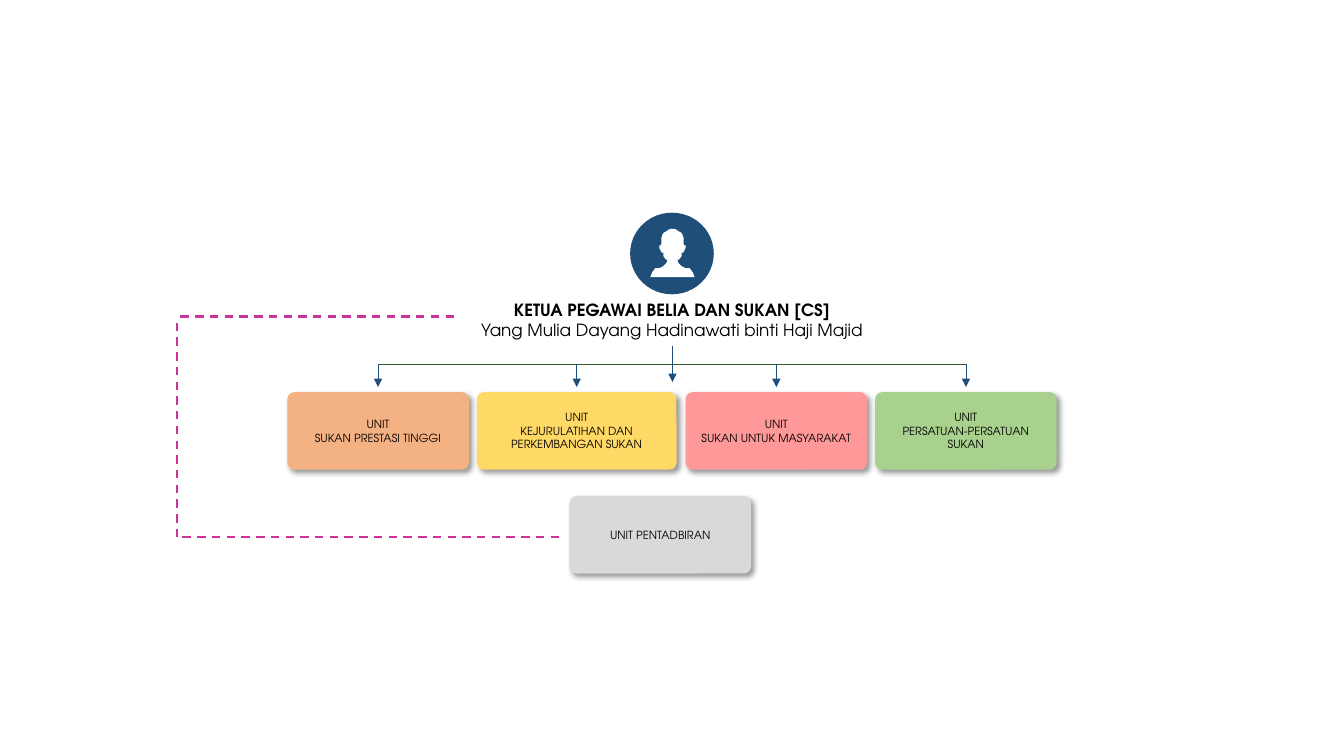
from lxml.etree import SubElement
from pptx import Presentation
from pptx.dml.color import RGBColor
from pptx.enum.dml import MSO_LINE
from pptx.enum.shapes import MSO_CONNECTOR, MSO_SHAPE
from pptx.enum.text import MSO_ANCHOR, MSO_AUTO_SIZE, PP_ALIGN
from pptx.oxml.ns import qn
from pptx.util import Inches, Pt

FONT = "TeX Gyre Adventor"
NAVY, GREEN, MAGENTA = "1F4E79", "385723", "CC3399"
WHITE, BLACK = "FFFFFF", "000000"

# Right half of the person icon: distance from its axis, and height on the slide
PERSON_AXIS = 6.67
PERSON_HALF = [
    (0.02, 2.27), (0.04, 2.28), (0.07, 2.3), (0.09, 2.31), (0.1, 2.33),
    (0.11, 2.36), (0.11, 2.42), (0.12, 2.44), (0.13, 2.43), (0.13, 2.46),
    (0.11, 2.5), (0.1, 2.51), (0.09, 2.5), (0.09, 2.54), (0.07, 2.57),
    (0.05, 2.58), (0.06, 2.61), (0.09, 2.64), (0.13, 2.66), (0.17, 2.66),
    (0.2, 2.7), (0.22, 2.75),
]


def rgb(color):
    return RGBColor.from_string(color)


class ChartSlide:
    """Organisation chart slide with one font and one box style."""

    def __init__(self, slide, font):
        self.shapes = slide.shapes
        self.font = font

    def paint(self, shape, color):
        shape.shadow.inherit = False
        shape.fill.solid()
        shape.fill.fore_color.rgb = rgb(color)
        shape.line.fill.background()

    def style(self, paragraph, size):
        paragraph.alignment = PP_ALIGN.CENTER
        paragraph.font.name = self.font
        paragraph.font.size = Pt(size)
        paragraph.font.color.rgb = rgb(BLACK)

    def ellipse(self, left, top, width, height, color):
        shape = self.shapes.add_shape(
            MSO_SHAPE.OVAL, Inches(left), Inches(top), Inches(width), Inches(height))
        self.paint(shape, color)

    def outline(self, points, color):
        builder = self.shapes.build_freeform(
            *(Inches(value) for value in points[0]))
        builder.add_line_segments(
            [(Inches(x), Inches(y)) for x, y in points[1:]], close=True)
        self.paint(builder.convert_to_shape(), color)

    def heading(self, left, top, width, height, role, name):
        box = self.shapes.add_textbox(
            Inches(left), Inches(top), Inches(width), Inches(height))
        frame = box.text_frame
        frame.word_wrap = True
        frame.auto_size = MSO_AUTO_SIZE.SHAPE_TO_FIT_TEXT
        paragraph = frame.paragraphs[0]
        self.style(paragraph, 12)
        run = paragraph.add_run()
        run.text = role
        run.font.bold = True
        paragraph.add_line_break()
        paragraph.add_run().text = name

    def unit(self, left, top, width, color, lines):
        shape = self.shapes.add_shape(
            MSO_SHAPE.ROUNDED_RECTANGLE,
            Inches(left), Inches(top), Inches(width), Inches(0.77))
        shape.adjustments[0] = 0.09
        self.paint(shape, color)
        self.drop_shadow(shape)
        frame = shape.text_frame
        frame.word_wrap = True
        frame.vertical_anchor = MSO_ANCHOR.MIDDLE
        frame.text = "\n".join(lines)
        for paragraph in frame.paragraphs:
            self.style(paragraph, 8)

    def drop_shadow(self, shape):
        effects = shape.element.spPr.find(qn("a:effectLst"))
        shadow = SubElement(
            effects, qn("a:outerShdw"), blurRad=str(Pt(4)), dist=str(Pt(3)),
            dir=str(45 * 60000), algn="tl", rotWithShape="0")
        color = SubElement(shadow, qn("a:srgbClr"), val=BLACK)
        SubElement(color, qn("a:alpha"), val="40000")

    def line(self, start, end, color, width=0.5, dashed=False, arrow=False):
        connector = self.shapes.add_connector(
            MSO_CONNECTOR.STRAIGHT, *(Inches(value) for value in start + end))
        connector.line.color.rgb = rgb(color)
        connector.line.width = Pt(width)
        if dashed:
            connector.line.dash_style = MSO_LINE.DASH
        properties = connector.element.spPr
        if arrow:
            SubElement(properties.find(qn("a:ln")), qn("a:tailEnd"), type="triangle")
        SubElement(properties, qn("a:effectLst"))


def main():
    presentation = Presentation()
    presentation.slide_width = Inches(13.33)
    presentation.slide_height = Inches(7.5)
    slide = presentation.slides.add_slide(presentation.slide_layouts[6])
    chart = ChartSlide(slide, FONT)

    # Dashed link from the head to the administration unit
    for start, end in [((1.81, 5.33), (5.6, 5.33)),
                       ((1.76, 5.33), (1.76, 3.14)),
                       ((1.79, 3.14), (4.5, 3.14))]:
        chart.line(start, end, MAGENTA, width=1.5, dashed=True)

    # Head of the department
    chart.heading(3.79, 2.92, 5.75, 0.5, "KETUA PEGAWAI BELIA DAN SUKAN [CS]",
                  "Yang Mulia Dayang Hadinawati binti Haji Majid")
    chart.ellipse(6.25, 2.11, 0.83, 0.81, NAVY)
    right = [(PERSON_AXIS + x, y) for x, y in PERSON_HALF]
    left = [(PERSON_AXIS - x, y) for x, y in reversed(PERSON_HALF)]
    chart.outline(right + left, WHITE)

    # Sports units
    units = [
        (2.85, 1.8, "F4B183", "SUKAN PRESTASI TINGGI"),
        (4.73, 1.98, "FFD966", "KEJURULATIHAN DAN PERKEMBANGAN SUKAN"),
        (6.8, 1.8, "FF9999", "SUKAN UNTUK MASYARAKAT"),
        (8.68, 1.8, "A9D18E", "PERSATUAN-PERSATUAN SUKAN"),
    ]
    for left_edge, width, color, name in units:
        chart.unit(left_edge, 3.89, width, color, ["UNIT", name])

    # Branches from the head to the units
    chart.line((3.75, 3.61), (9.58, 3.61), GREEN)
    for left_edge, width, _, _ in units:
        middle = left_edge + width / 2
        chart.line((middle, 3.61), (middle, 3.84), NAVY, arrow=True)
    chart.line((6.67, 3.43), (6.67, 3.79), NAVY, arrow=True)

    # Administration unit
    chart.unit(5.65, 4.92, 1.8, "D9D9D9", ["UNIT PENTADBIRAN"])

    presentation.save("out.pptx")


if __name__ == "__main__":
    main()
